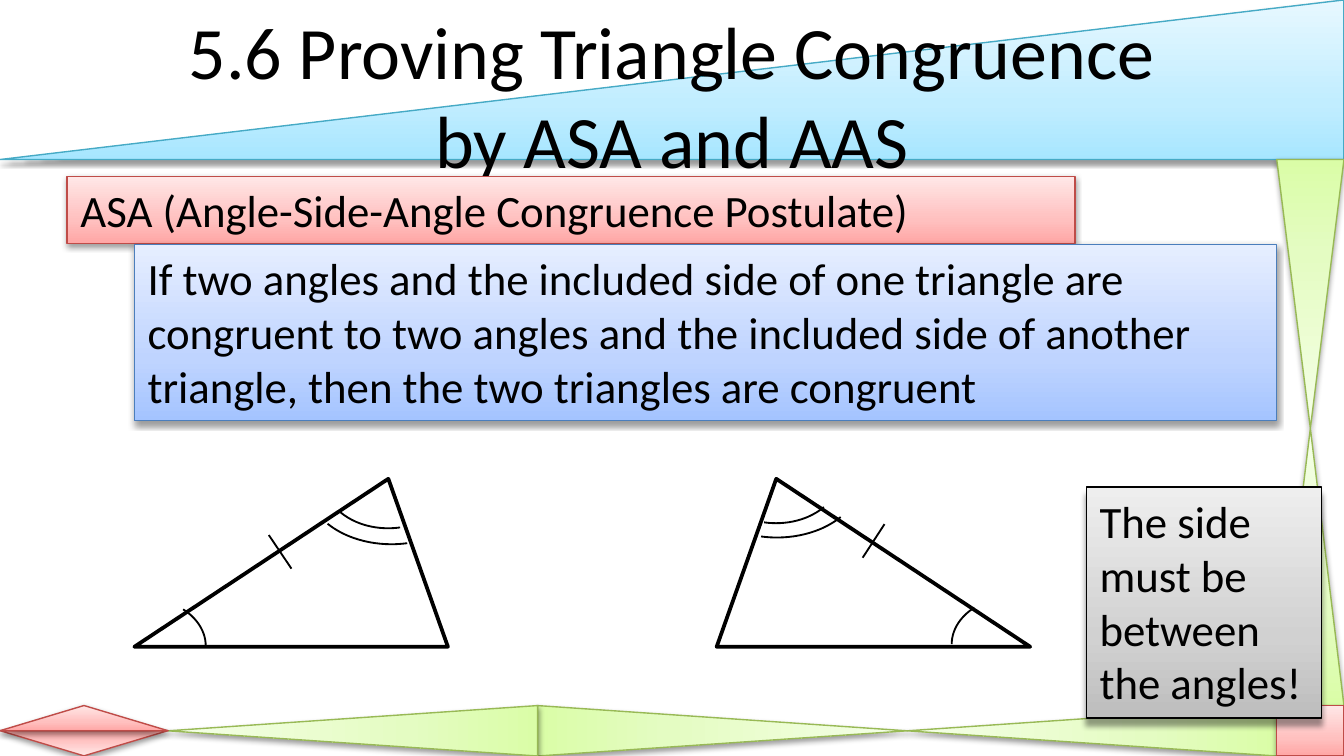
from lxml.etree import SubElement
from pptx import Presentation
from pptx.dml.color import RGBColor
from pptx.enum.shapes import MSO_CONNECTOR, MSO_SHAPE
from pptx.enum.text import MSO_ANCHOR, MSO_AUTO_SIZE, PP_ALIGN
from pptx.oxml.ns import qn
from pptx.util import Inches, Pt

BLACK = RGBColor(0x00, 0x00, 0x00)
WHITE = RGBColor(0xFF, 0xFF, 0xFF)
AQUA = RGBColor(0x46, 0xAA, 0xC5)
GREEN = RGBColor(0x98, 0xB9, 0x55)
RED = RGBColor(0xBF, 0x4C, 0x48)
BLUE = RGBColor(0x4B, 0x7E, 0xBC)
SHADES = {
    AQUA: (RGBColor(0xA7, 0xE6, 0xFF), RGBColor(0xC1, 0xED, 0xFF), RGBColor(0xE7, 0xF8, 0xFF)),
    GREEN: (RGBColor(0xDA, 0xFD, 0xA7), RGBColor(0xE4, 0xFC, 0xC2), RGBColor(0xF5, 0xFF, 0xE7)),
    RED: (RGBColor(0xFF, 0xA6, 0xA5), RGBColor(0xFF, 0xC0, 0xBF), RGBColor(0xFF, 0xE7, 0xE7)),
    BLUE: (RGBColor(0xA4, 0xC4, 0xFF), RGBColor(0xBF, 0xD4, 0xFF), RGBColor(0xE6, 0xEE, 0xFF)),
    BLACK: (RGBColor(0xBD, 0xBD, 0xBD), RGBColor(0xD1, 0xD1, 0xD1), RGBColor(0xEE, 0xEE, 0xEE)),
}
COLS, ROWS = 160, 90


class Board:
    """Draws styled elements on one slide, placed by columns and rows."""

    def __init__(self, deck):
        self.slide = deck.slides.add_slide(deck.slide_layouts[5])
        self.shapes = self.slide.shapes
        self.wide, self.high = deck.slide_width, deck.slide_height
        self.font = {"name": "Calibri", "size": Pt(24), "bold": False}

    def place(self, x, y, w, h):
        return (round(x * self.wide / COLS), round(y * self.high / ROWS),
                round(w * self.wide / COLS), round(h * self.high / ROWS))

    def letter(self, frame, text, align, form, **font):
        frame.text = text
        for key, value in form.items():
            setattr(frame, key, value)
        for para in frame.paragraphs:
            para.alignment = align
            for run in para.runs:
                for key, value in {**self.font, **font}.items():
                    setattr(run.font, key, value)
                run.font.color.rgb = BLACK

    def title(self, text, box):
        head = self.shapes.title
        for key, value in zip(("left", "top", "width", "height"), self.place(*box)):
            setattr(head, key, value)
        form = {"vertical_anchor": MSO_ANCHOR.MIDDLE, "auto_size": MSO_AUTO_SIZE.NONE}
        self.letter(head.text_frame, text, PP_ALIGN.CENTER, form, size=Pt(39.6))
        head.element.getparent().append(head.element)

    def shape(self, kind, box, tone, weight, flip="", turn=0, bends=()):
        item = self.shapes.add_shape(kind, *self.place(*box))
        item.shadow.inherit = False
        item.line.color.rgb = tone
        item.line.width = Pt(weight)
        item.rotation = turn
        for spot, bend in enumerate(bends):
            item.adjustments[spot] = bend
        if flip:
            item.element.spPr.find(qn("a:xfrm")).set("flip" + flip, "1")
        return item

    def glow(self, kind, box, tone, drop=1.6, **look):
        item = self.shape(kind, box, tone, 0.75, **look)
        item.fill.gradient()
        item.fill.gradient_angle = 90
        stops = item.element.spPr.find(qn("a:gradFill")).find(qn("a:gsLst"))
        for stop in list(stops):
            stops.remove(stop)
        for pos, shade in zip((0, 35, 100), SHADES[tone]):
            stop = SubElement(stops, qn("a:gs"), pos=str(pos * 1000))
            SubElement(stop, qn("a:srgbClr"), val=str(shade))
        cast = SubElement(item.element.spPr.find(qn("a:effectLst")), qn("a:outerShdw"),
                          blurRad=str(Pt(3.1)), dist=str(Pt(drop)), dir="5400000", rotWithShape="0")
        ink = SubElement(cast, qn("a:srgbClr"), val=str(BLACK))
        SubElement(ink, qn("a:alpha"), val="38000")
        return item

    def panel(self, text, box, tone, drop=1.6):
        item = self.glow(MSO_SHAPE.RECTANGLE, box, tone, drop)
        form = {"word_wrap": True, "vertical_anchor": MSO_ANCHOR.TOP,
                "auto_size": MSO_AUTO_SIZE.SHAPE_TO_FIT_TEXT}
        self.letter(item.text_frame, text, PP_ALIGN.LEFT, form)

    def figure(self, box, flip):
        item = self.shape(MSO_SHAPE.ISOSCELES_TRIANGLE, box, BLACK, 2, flip, bends=(0.81,))
        item.fill.solid()
        item.fill.fore_color.rgb = WHITE

    def arc(self, box, flip, bends):
        self.shape(MSO_SHAPE.ARC, box, BLACK, 1, flip, bends=bends).fill.background()

    def tick(self, x, y, dx, dy):
        left, top, run, fall = self.place(x, y, dx, dy)
        mark = self.shapes.add_connector(MSO_CONNECTOR.STRAIGHT, left, top, left + run, top + fall)
        mark.line.color.rgb = BLACK
        mark.line.width = Pt(1)
        SubElement(mark.element.spPr, qn("a:effectLst"))


def main():
    deck = Presentation()
    deck.slide_width, deck.slide_height = Inches(10), Inches(10) * 9 // 16
    board = Board(deck)
    peak = MSO_SHAPE.ISOSCELES_TRIANGLE

    board.glow(MSO_SHAPE.RIGHT_TRIANGLE, (0, 0, 160, 19), AQUA, flip="H")
    board.glow(peak, (152, 19, 8, 32), GREEN, flip="V")
    board.glow(peak, (152, 51, 8, 33), GREEN)
    for x, turn, flip in ((127, 270, ""), (83, 90, "H"), (39, 270, "")):
        board.glow(peak, (x, 65, 6, 44), GREEN, turn=turn, flip=flip)
    board.glow(MSO_SHAPE.RECTANGLE, (152, 84, 8, 6), RED)
    board.glow(peak, (0, 87, 20, 3), RED, flip="V")
    board.glow(peak, (0, 84, 20, 3), RED)

    board.title("5.6 Proving Triangle Congruence\vby ASA and AAS", (0, 3.75, 160, 15))
    board.panel("ASA (Angle-Side-Angle Congruence Postulate)", (8, 21, 120, 8), RED)
    board.panel("If two angles and the included side of one triangle are congruent to two "
                "angles and the included side of another triangle, then the two triangles "
                "are congruent", (16, 29.1, 136, 21), BLUE)

    for x, flip in ((16, ""), (85.33, "H")):
        board.figure((x, 57, 37.33, 20), flip)
    board.tick(32, 63.7, 2.7, 4)
    board.tick(105.3, 62.4, -2.6, 4)
    for x, y, flip in ((9.3, 71.2, ""), (113.3, 71, "H")):
        board.arc((x, y, 15.2, 11.4), flip, (191.07, 0))
    board.panel("The side must be between the angles!", (129.33, 58, 28, 27.5), BLACK, 4)
    for x, y, w, h, flip in ((38.6, 51.5, 15.2, 11.4, ""), (84.8, 50.9, 15.2, 11.4, "H"),
                             (36.3, 49.8, 20.6, 15, ""), (82.2, 49, 20.6, 15, "H")):
        board.arc((x, y, w, h), flip, (45.4, 87.79))
    deck.save("out.pptx")


if __name__ == "__main__":
    main()
